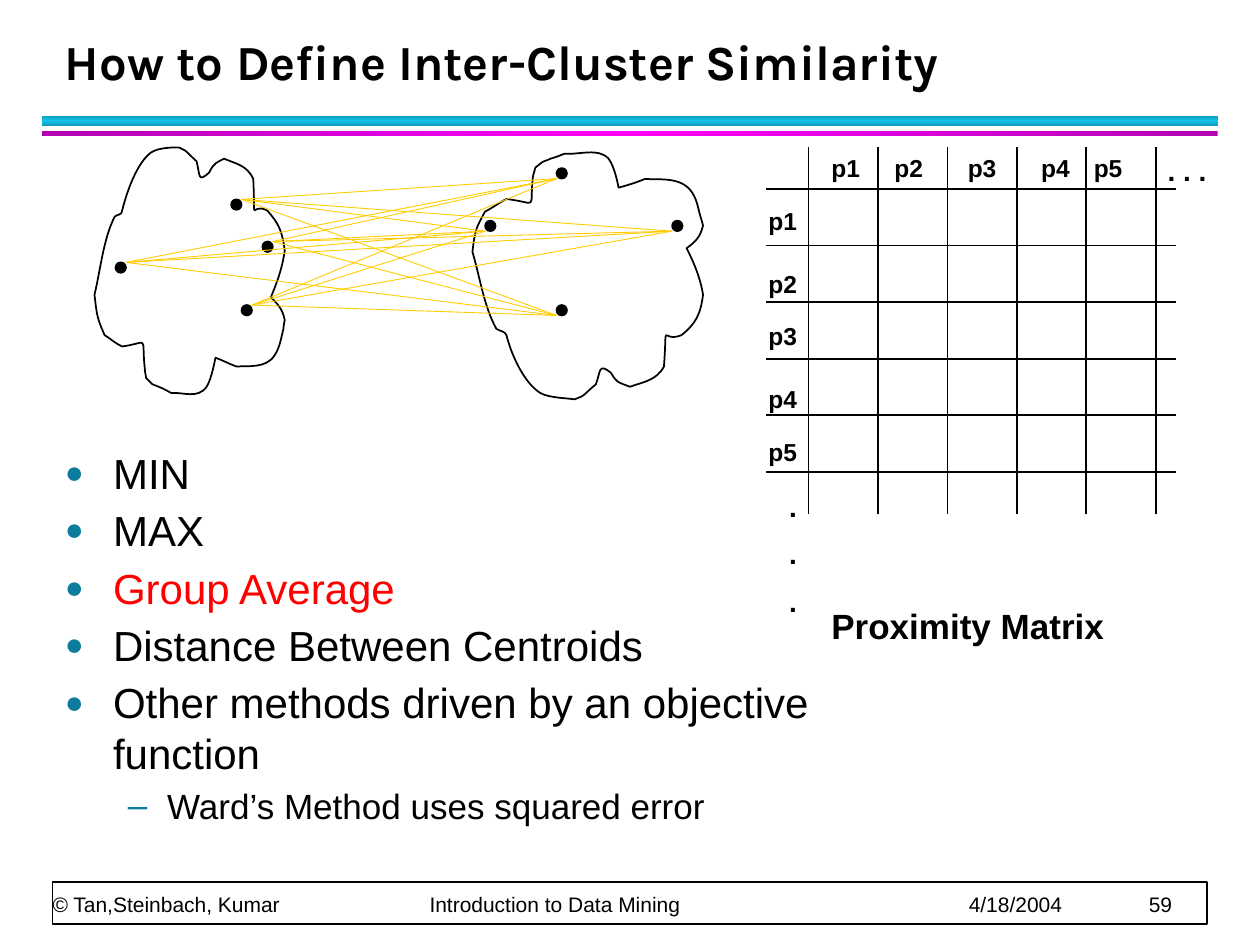
from copy import deepcopy
from dataclasses import dataclass
from itertools import product
from typing import NamedTuple, Optional

from lxml.etree import SubElement
from pptx import Presentation
from pptx.dml.color import RGBColor
from pptx.enum.shapes import MSO_CONNECTOR, MSO_SHAPE
from pptx.enum.text import MSO_ANCHOR
from pptx.oxml.ns import qn
from pptx.util import Cm, Pt


@dataclass(frozen=True)
class Theme:
    ink: str = "000000"
    paper: str = "FFFFFF"
    accent: str = "FF0000"
    link: str = "FFCC00"
    bullet: str = "0C7B9C"
    cyan: tuple = ("0E9BBA", "12C2E9", "0E9BBA")
    magenta: tuple = ("B200B2", "FF00FF", "B200B2")
    title_font: str = "Karla"
    body_font: str = "Arial"
    title: float = 28
    body: float = 24
    sub: float = 20
    dots: float = 16
    label: float = 14
    footer: float = 12


class Box(NamedTuple):
    """Left, top, width and height in centimetres."""
    left: float
    top: float
    width: float
    height: float

    def lengths(self):
        return [Cm(value) for value in self]


class Point(NamedTuple):
    x: float
    y: float


class Bullet(NamedTuple):
    mark: str
    percent: int
    margin: float
    hang: float


class Method(NamedTuple):
    text: str
    colour: str
    size: float
    level: int = 0


THEME = Theme()
BULLETS = [Bullet("●", 75, 0.97, 0.97), Bullet("–", 100, 2.06, 0.79)]
METHODS = [
    Method("MIN", THEME.ink, THEME.body),
    Method("MAX", THEME.ink, THEME.body),
    Method("Group Average", THEME.accent, THEME.body),
    Method("Distance Between Centroids", THEME.ink, THEME.body),
    Method("Other methods driven by an objective function", THEME.ink, THEME.body),
    Method("Ward’s Method uses squared error", THEME.ink, THEME.sub, 1),
]
DOT = 0.21
LEFT_DOTS = [Point(4.87, 6.15), Point(4.66, 4.02), Point(2.33, 5.29), Point(5.29, 4.87)]
RIGHT_DOTS = [Point(13.55, 4.45), Point(9.78, 4.45), Point(11.22, 6.15), Point(11.22, 3.39)]

# Bezier outlines: a start point, then three points for each curve.
OUTLINE_UNIT = Cm(2.54) / 100
LEFT_OUTLINE = [
    (91, 172), (82, 190), (80, 213), (75, 234), (77, 251), (77, 252), (83, 266),
    (88, 269), (92, 273), (97, 275), (119, 272), (112, 265), (115, 293),
    (115, 296), (116, 298), (116, 300), (123, 307), (119, 304), (126, 307),
    (129, 308), (136, 312), (136, 312), (145, 311), (157, 317), (164, 307),
    (168, 301), (171, 284), (171, 284), (177, 286), (182, 289), (188, 291),
    (196, 290), (211, 293), (218, 282), (222, 276), (223, 269), (225, 261),
    (225, 259), (226, 254), (226, 254), (224, 245), (221, 242), (215, 236),
    (220, 224), (224, 213), (226, 199), (224, 183), (221, 177), (212, 167),
    (198, 160), (203, 182), (201, 142), (196, 131), (187, 130), (178, 126),
    (172, 129), (170, 129), (166, 137), (157, 145), (159, 140), (156, 128),
    (145, 118), (150, 121), (142, 117), (138, 117), (126, 117), (120, 121),
    (109, 129), (101, 151), (97, 167), (97, 171), (93, 170), (91, 172),
]
RIGHT_OUTLINE = [
    (394, 261), (384, 243), (381, 220), (375, 200), (377, 182), (378, 181), (385, 168),
    (391, 165), (396, 161), (402, 158), (428, 161), (420, 168), (423, 140),
    (424, 138), (424, 135), (425, 133), (434, 126), (428, 130), (437, 126),
    (441, 125), (448, 122), (448, 122), (460, 123), (475, 117), (483, 126),
    (488, 132), (491, 149), (491, 149), (498, 147), (505, 145), (512, 142),
    (522, 143), (539, 140), (548, 151), (553, 157), (554, 165), (556, 172),
    (557, 175), (558, 179), (558, 179), (556, 188), (552, 192), (545, 197),
    (551, 209), (556, 221), (558, 234), (556, 250), (552, 257), (541, 266),
    (524, 273), (530, 251), (527, 291), (521, 302), (511, 303), (500, 307),
    (493, 304), (490, 305), (485, 296), (475, 288), (477, 294), (473, 305),
    (460, 316), (466, 313), (456, 317), (451, 316), (436, 316), (429, 312),
    (416, 304), (406, 282), (402, 266), (401, 263), (397, 263), (394, 261),
]


def rgb(colour: str) -> RGBColor:
    return RGBColor.from_string(colour)


def add_frame(slide, box: Box, anchor=MSO_ANCHOR.TOP, inset: bool = True):
    frame = slide.shapes.add_textbox(*box.lengths()).text_frame
    frame.word_wrap = True
    frame.vertical_anchor = anchor
    if not inset:
        frame.margin_left = frame.margin_right = frame.margin_top = frame.margin_bottom = 0
    return frame


def write(frame, text: str, *, size: float, colour: str = THEME.ink, font: str = THEME.body_font,
          bold: bool = False, before: float = 0, after: float = 0,
          line: Optional[float] = None, level: int = 0):
    """Write one paragraph, filling the frame's first one if it is still empty."""
    first = frame.paragraphs[0]
    paragraph = frame.add_paragraph() if first.runs else first
    paragraph.level = level
    paragraph.space_before, paragraph.space_after = Pt(before), Pt(after)
    if line:
        paragraph.line_spacing = Pt(line)
    run = paragraph.add_run()
    run.text = text
    run.font.size, run.font.bold, run.font.name = Pt(size), bold, font
    run.font.color.rgb = rgb(colour)
    return paragraph


def set_bullet(paragraph, bullet: Bullet) -> None:
    props = paragraph._p.get_or_add_pPr()
    props.set("marL", str(Cm(bullet.margin)))
    props.set("indent", str(-Cm(bullet.hang)))
    SubElement(SubElement(props, qn("a:buClr")), qn("a:srgbClr"), val=THEME.bullet)
    SubElement(props, qn("a:buSzPct"), val=str(bullet.percent * 1000))
    SubElement(props, qn("a:buFont"), typeface=THEME.body_font)
    SubElement(props, qn("a:buChar"), char=bullet.mark)


def set_tabs(paragraph, stops: list[float]) -> None:
    tabs = SubElement(paragraph._p.get_or_add_pPr(), qn("a:tabLst"))
    for stop in stops:
        SubElement(tabs, qn("a:tab"), pos=str(Cm(stop)), algn="l")


def add_line(slide, start: Point, end: Point, colour: str = THEME.ink, width: float = 1) -> None:
    line = slide.shapes.add_connector(
        MSO_CONNECTOR.STRAIGHT, Cm(start.x), Cm(start.y), Cm(end.x), Cm(end.y))
    line.line.color.rgb, line.line.width = rgb(colour), Pt(width)
    SubElement(line._element.spPr, qn("a:effectLst"))


def add_solid(slide, kind, box: Box, fill: str):
    shape = slide.shapes.add_shape(kind, *box.lengths())
    shape.shadow.inherit = False
    shape.fill.solid()
    shape.fill.fore_color.rgb = rgb(fill)
    shape.line.color.rgb, shape.line.width = rgb(THEME.ink), Pt(1)
    return shape


def add_gradient_bar(slide, box: Box, colours: tuple, angle: float) -> None:
    bar = add_solid(slide, MSO_SHAPE.RECTANGLE, box, colours[0])
    bar.line.fill.background()
    bar.fill.gradient()
    bar.fill.gradient_angle = angle
    stop_list = bar._element.spPr.find(".//" + qn("a:gsLst"))
    stop_list.append(deepcopy(stop_list[-1]))
    for stop, colour, position in zip(bar.fill.gradient_stops, colours, (0, 0.5, 1)):
        stop.color.rgb, stop.position = rgb(colour), position


def add_cluster(slide, outline: list, dots: list[Point]) -> None:
    builder = slide.shapes.build_freeform(*outline[0], scale=OUTLINE_UNIT)
    builder.add_line_segments(outline[1:], close=True)
    cloud = builder.convert_to_shape()
    cloud.shadow.inherit = False
    cloud.fill.background()
    cloud.line.color.rgb, cloud.line.width = rgb(THEME.ink), Pt(1)
    # Each three straight segments become one Bezier curve.
    segments = list(cloud._element.iter(qn("a:lnTo")))
    for first in range(0, len(segments), 3):
        curve = segments[first].makeelement(qn("a:cubicBezTo"))
        segments[first].addprevious(curve)
        for segment in segments[first:first + 3]:
            curve.append(segment[0])
            segment.getparent().remove(segment)
    for dot in dots:
        add_solid(slide, MSO_SHAPE.OVAL, Box(dot.x, dot.y, DOT, DOT), THEME.ink)


def add_matrix(slide) -> None:
    for i in range(6):
        x, y = 16.3 + 1.4 * i, 3.81 + 1.14 * i
        add_line(slide, Point(x, 2.97), Point(x, 10.37))
        add_line(slide, Point(15.45, y), Point(23.71, y))
    columns = [Point(x, 2.97) for x in (16.51, 17.78, 19.26, 20.74, 21.8)]
    rows = [Point(15.24, y) for y in (4.02, 5.29, 6.35, 7.62, 8.69)]
    for places in (columns, rows):
        for number, place in enumerate(places, 1):
            frame = add_frame(slide, Box(*place, 1.48, 0.85))
            write(frame, f"p{number}", size=THEME.label, bold=True)
    write(add_frame(slide, Box(23.29, 2.97, 1.48, 0.93)), ". . .", size=THEME.dots, bold=True)
    more_rows = add_frame(slide, Box(15.66, 9.74, 1.48, 2.96))
    for _ in range(3):
        write(more_rows, ".", size=THEME.dots, bold=True, before=8)
    write(add_frame(slide, Box(16.51, 12.07, 6.99, 1.1)), "Proximity Matrix",
          size=THEME.sub, bold=True)


def main() -> None:
    deck = Presentation()
    deck.slide_width, deck.slide_height = Cm(25.4), Cm(19.05)
    slide = deck.slides.add_slide(deck.slide_layouts[6])

    add_gradient_bar(slide, Box(0.85, 2.33, 23.7, 0.21), THEME.cyan, 90)
    add_gradient_bar(slide, Box(0.85, 2.64, 23.7, 0.11), THEME.magenta, 0)
    add_solid(slide, MSO_SHAPE.RECTANGLE, Box(1.06, 17.78, 23.28, 0.85), THEME.paper)
    footer = add_frame(slide, Box(1.06, 17.78, 23.24, 0.71), MSO_ANCHOR.BOTTOM, inset=False)
    set_tabs(write(footer, "© Tan,Steinbach, Kumar\tIntroduction to Data Mining\t4/18/2004\t59",
                   size=THEME.footer, line=20), [7.6, 18.47, 22.1])
    title = add_frame(slide, Box(1.06, 0.43, 23.01, 1.52), MSO_ANCHOR.BOTTOM)
    write(title, "How to Define Inter-Cluster Similarity", size=THEME.title,
          font=THEME.title_font, bold=True, line=36)

    add_matrix(slide)
    add_cluster(slide, LEFT_OUTLINE, LEFT_DOTS)
    add_cluster(slide, RIGHT_OUTLINE, RIGHT_DOTS)
    for left, right in product(LEFT_DOTS, RIGHT_DOTS):
        add_line(slide, Point(left.x + DOT, left.y), Point(right.x, right.y + DOT),
                 THEME.link, 0.5)

    methods = add_frame(slide, Box(1.06, 8.89, 16.08, 8.69))
    for method in METHODS:
        paragraph = write(methods, method.text, size=method.size, colour=method.colour,
                          before=2, after=2, line=1.2 * method.size, level=method.level)
        set_bullet(paragraph, BULLETS[method.level])
    deck.save("out.pptx")


if __name__ == "__main__":
    main()
